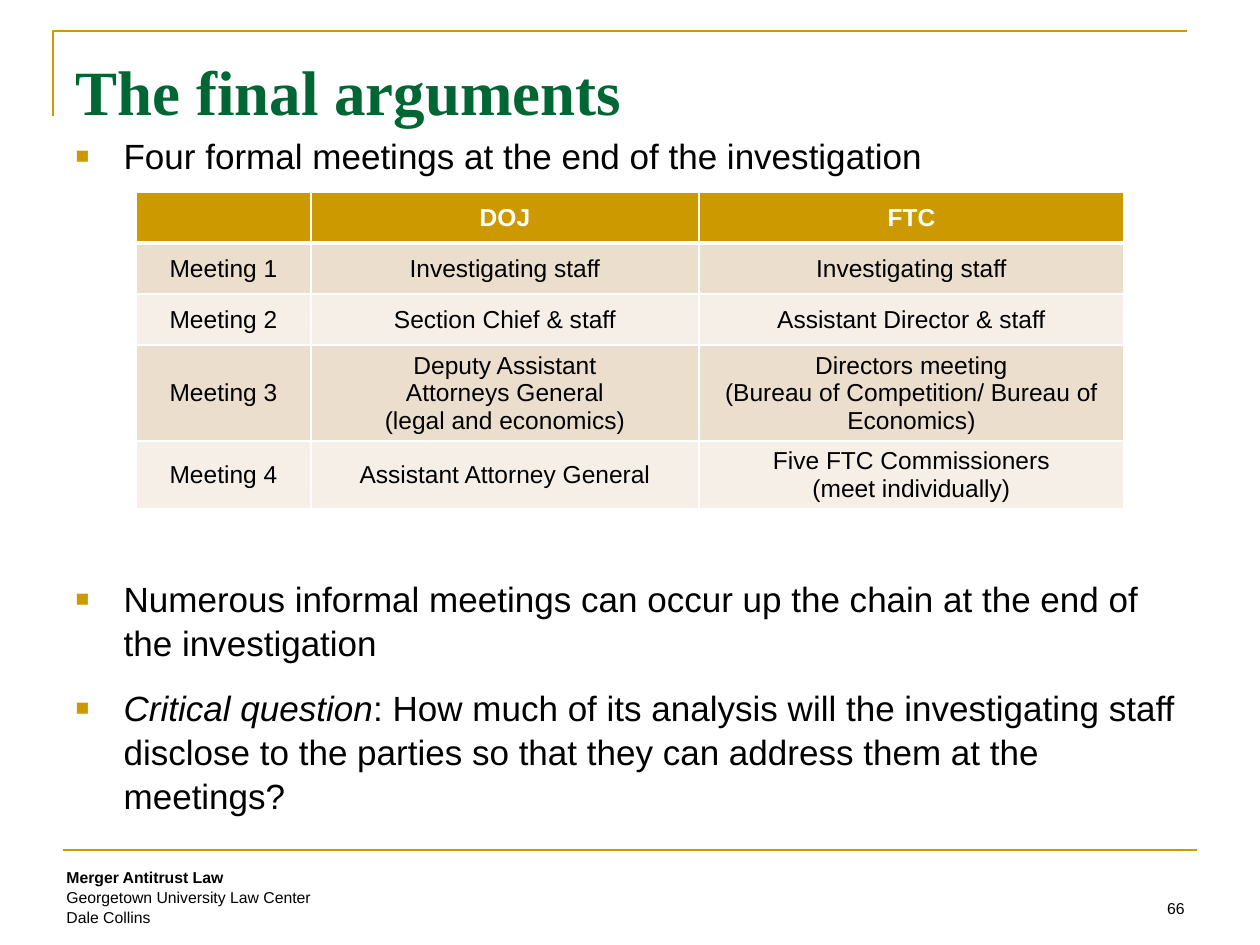
import pptx
import pptx.dml.color
import pptx.enum.shapes
import pptx.enum.text
import pptx.oxml
import pptx.oxml.ns
import pptx.oxml.xmlchemy
import pptx.util
from lxml import etree

GOLD, GREEN, BLACK, WHITE = "CC9900", "006633", "000000", "FFFFFF"
BANDS = ("ECDECC", "F6EFE7")
ALIGN = pptx.enum.text.PP_ALIGN
ANCHOR = pptx.enum.text.MSO_ANCHOR

TITLE = "The final arguments"
# Each bullet: space before in points, then its runs as (text, italic)
BULLETS = [
    (12, [("Four formal meetings at the end of the investigation", False)]),
    (228, [("Numerous informal meetings can occur up the chain at the end of "
            "the investigation", False)]),
    (12, [("Critical question", True),
          (": How much of its analysis will the investigating staff disclose to "
           "the parties so that they can address them at the meetings?", False)]),
]
MEETINGS = [
    ("", "DOJ", "FTC"),
    ("Meeting 1", "Investigating staff", "Investigating staff"),
    ("Meeting 2", "Section Chief & staff", "Assistant Director & staff"),
    ("Meeting 3", "Deputy Assistant\nAttorneys General\n(legal and economics)",
     "Directors meeting\n(Bureau of Competition/ Bureau of Economics)"),
    ("Meeting 4", "Assistant Attorney General",
     "Five FTC Commissioners\n(meet individually)"),
]
COLUMN_WIDTHS = (175, 388, 425)
ROW_HEIGHTS = (51, 51, 51, 96, 67)
FOOTER = [("Merger Antitrust Law", True),
          ("Georgetown University Law Center", False),
          ("Dale Collins", False)]
SLIDE_NUMBER = "66"


def px(value):
    return pptx.util.Emu(round(value * 914400 / 126))


def color(value):
    return pptx.dml.color.RGBColor.from_string(value)


def add_run(paragraph, text, size, fill=BLACK, bold=False, italic=False, font="Arial"):
    run = paragraph.add_run()
    run.text = text
    run.font.name, run.font.size = font, pptx.util.Pt(size)
    run.font.bold, run.font.italic = bold, italic
    run.font.color.rgb = color(fill)


def place(shape, left, top, width, height):
    shape.left, shape.top = px(left), px(top)
    shape.width, shape.height = px(width), px(height)


def prepare(frame, anchor):
    frame.word_wrap = True
    frame.auto_size = pptx.enum.text.MSO_AUTO_SIZE.NONE
    frame.vertical_anchor = anchor


def add_child(parent, tag, **attributes):
    return etree.SubElement(parent, pptx.oxml.ns.qn(tag), attributes)


def set_bullet(paragraph):
    properties = paragraph._p.get_or_add_pPr()
    properties.set("marL", str(px(48)))
    properties.set("indent", str(-px(48)))
    add_child(add_child(properties, "a:buClr"), "a:srgbClr", val=GOLD)
    add_child(properties, "a:buSzPct", val="65000")
    add_child(properties, "a:buFont", typeface="Arial")
    add_child(properties, "a:buChar", char="■")


def set_borders(cell, top, bottom):
    """Draw white borders: 1 pt at the sides, the given points above and below."""
    properties = cell._tc.get_or_add_tcPr()
    sides = (("a:lnL", 1), ("a:lnR", 1), ("a:lnT", top), ("a:lnB", bottom))
    for position, (tag, points) in enumerate(sides):
        line = add_child(properties, tag, w=str(pptx.util.Pt(points)))
        add_child(add_child(line, "a:solidFill"), "a:srgbClr", val=WHITE)
        properties.insert(position, line)


def add_rules(slide):
    builder = slide.shapes.build_freeform(px(53), px(116))
    builder.add_line_segments([(px(53), px(31)), (px(1187), px(31))], close=False)
    corner = builder.convert_to_shape()
    corner.fill.background()
    corner.shadow.inherit = False
    footer_rule = slide.shapes.add_connector(
        pptx.enum.shapes.MSO_CONNECTOR.STRAIGHT, px(63), px(850), px(1197), px(850))
    add_child(footer_rule._element.spPr, "a:effectLst")
    for shape in (corner, footer_rule):
        shape.line.color.rgb = color(GOLD)
        shape.line.width = pptx.util.Pt(1.5)


def add_title(slide):
    title = slide.shapes.title
    place(title, 63, 38, 1134, 82)
    prepare(title.text_frame, ANCHOR.TOP)
    title.text_frame.margin_top = px(15)
    paragraph = title.text_frame.paragraphs[0]
    paragraph.alignment = ALIGN.LEFT
    add_run(paragraph, TITLE, 36, GREEN, bold=True, font="Times New Roman")


def add_body(slide):
    body = slide.placeholders[1]
    place(body, 63, 126, 1134, 722)
    frame = body.text_frame
    prepare(frame, ANCHOR.TOP)
    for index, (space, runs) in enumerate(BULLETS):
        paragraph = frame.add_paragraph() if index else frame.paragraphs[0]
        paragraph.space_before = pptx.util.Pt(space)
        paragraph.line_spacing = 1.05
        set_bullet(paragraph)
        for text, italic in runs:
            add_run(paragraph, text, 20, italic=italic)


def add_meetings(slide):
    table = slide.shapes.add_table(
        len(MEETINGS), len(COLUMN_WIDTHS), px(136), px(192),
        px(sum(COLUMN_WIDTHS)), px(sum(ROW_HEIGHTS))).table
    for column, width in zip(table.columns, COLUMN_WIDTHS):
        column.width = px(width)
    for row, height in zip(table.rows, ROW_HEIGHTS):
        row.height = px(height)
    for row, texts in enumerate(MEETINGS):
        header = row == 0
        for column, text in enumerate(texts):
            cell = table.cell(row, column)
            cell.fill.solid()
            cell.fill.fore_color.rgb = color(GOLD if header else BANDS[(row - 1) % 2])
            cell.vertical_anchor = ANCHOR.MIDDLE
            set_borders(cell, 3 if row == 1 else 1, 3 if header else 1)
            paragraph = cell.text_frame.paragraphs[0]
            paragraph.alignment = ALIGN.CENTER
            for index, line in enumerate(text.split("\n") if text else []):
                if index:
                    paragraph.add_line_break()
                add_run(paragraph, line, 14, WHITE if header else BLACK, bold=header)


def add_footer(slide):
    credit = slide.shapes.add_textbox(px(54), px(861), px(588), px(71)).text_frame
    prepare(credit, ANCHOR.TOP)
    paragraph = credit.paragraphs[0]
    paragraph.line_spacing = 1.05
    for index, (text, bold) in enumerate(FOOTER):
        if index:
            paragraph.add_line_break()
        add_run(paragraph, text, 9, bold=bold)

    number = slide.shapes.add_textbox(px(903), px(861), px(294), px(63)).text_frame
    prepare(number, ANCHOR.BOTTOM)
    number.paragraphs[0].alignment = ALIGN.RIGHT
    add_run(number.paragraphs[0], SLIDE_NUMBER, 9)


def main():
    presentation = pptx.Presentation()
    presentation.slide_width, presentation.slide_height = px(1260), px(945)
    slide = presentation.slides.add_slide(presentation.slide_layouts[1])
    add_rules(slide)
    add_title(slide)
    add_body(slide)
    add_footer(slide)
    add_meetings(slide)
    presentation.save("out.pptx")


if __name__ == "__main__":
    main()
